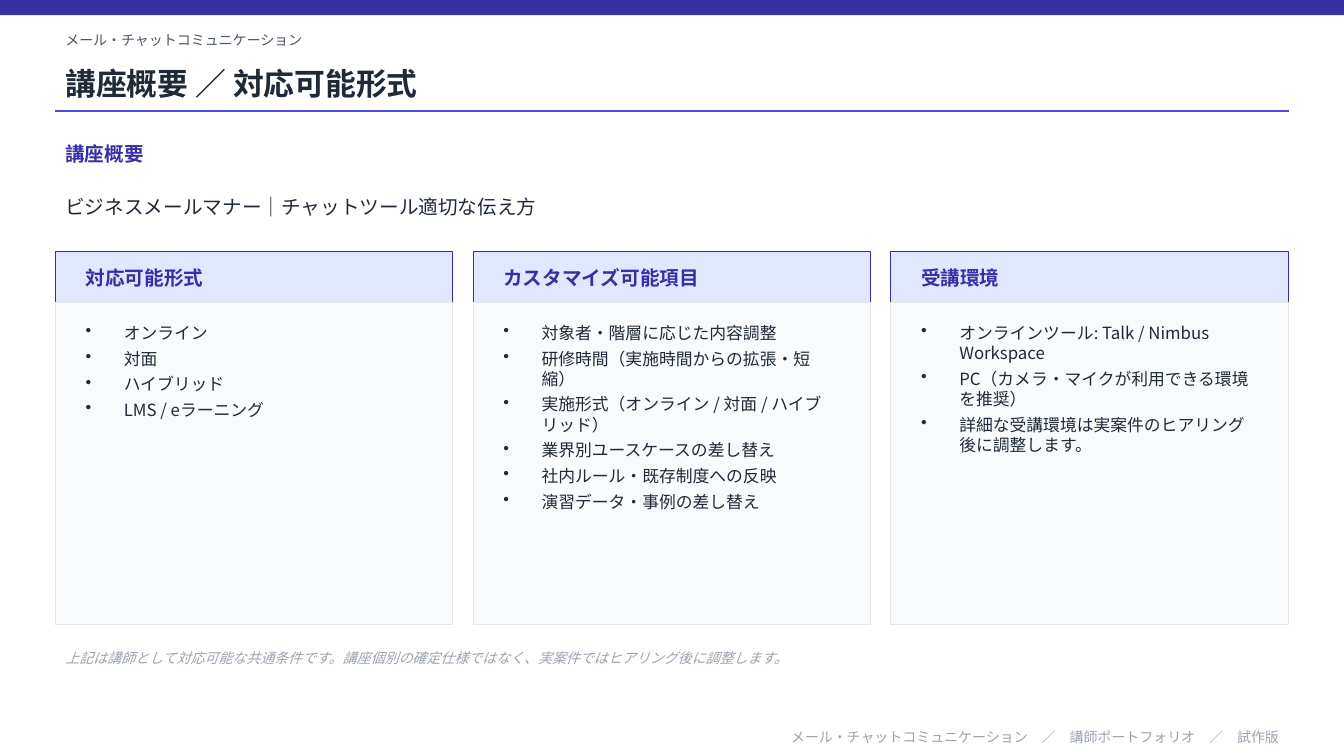
from lxml import etree
from pptx import Presentation
from pptx.dml.color import RGBColor
from pptx.enum.shapes import MSO_CONNECTOR, MSO_SHAPE
from pptx.enum.text import MSO_ANCHOR, PP_ALIGN
from pptx.oxml.ns import qn
from pptx.util import Inches, Pt

RECT, STRAIGHT = MSO_SHAPE.RECTANGLE, MSO_CONNECTOR.STRAIGHT
TOP, MIDDLE = MSO_ANCHOR.TOP, MSO_ANCHOR.MIDDLE
LEFT, RIGHT = PP_ALIGN.LEFT, PP_ALIGN.RIGHT

FONT = "Noto Sans CJK JP"
INDIGO, VIOLET, PALE_INDIGO = "3730A3", "4F46E5", "E0E7FF"
INK, SLATE, MUTED = "1F2937", "4B5563", "9CA3AF"
PANEL, PANEL_EDGE = "F9FAFB", "E5E7EB"

SLIDE_W, SLIDE_H = 13.33, 7.5
MARGIN = 0.55
CONTENT_W = SLIDE_W - 2 * MARGIN
CARD_GAP = 0.2
CARD_PAD = 0.2
HEADING_H = 0.5
BULLET_INDENT = 0.38

COURSE = "メール・チャットコミュニケーション"
CARDS = [
    ("対応可能形式", ["オンライン", "対面", "ハイブリッド", "LMS / eラーニング"]),
    ("カスタマイズ可能項目", [
        "対象者・階層に応じた内容調整",
        "研修時間（実施時間からの拡張・短縮）",
        "実施形式（オンライン / 対面 / ハイブリッド）",
        "業界別ユースケースの差し替え",
        "社内ルール・既存制度への反映",
        "演習データ・事例の差し替え",
    ]),
    ("受講環境", [
        "オンラインツール: Talk / Nimbus Workspace",
        "PC（カメラ・マイクが利用できる環境を推奨）",
        "詳細な受講環境は実案件のヒアリング後に調整します。",
    ]),
]


def color(hex_code):
    return RGBColor.from_string(hex_code)


def add_bullet(paragraph):
    properties = paragraph._p.get_or_add_pPr()
    indent = Inches(BULLET_INDENT)
    properties.set("marL", str(indent))
    properties.set("indent", str(-indent))
    etree.SubElement(properties, qn("a:buChar")).set("char", "•")


def add_text(slide, box, lines, size=10, ink=INK, bold=False, italic=False,
             align=LEFT, anchor=MIDDLE, bullets=False, space_after=None):
    """Write one paragraph per line into box (left, top, width, height)."""
    frame = slide.shapes.add_textbox(*map(Inches, box)).text_frame
    frame.word_wrap = True
    frame.vertical_anchor = anchor
    for number, line in enumerate(lines):
        paragraph = frame.add_paragraph() if number else frame.paragraphs[0]
        paragraph.alignment = align
        if bullets:
            add_bullet(paragraph)
        if space_after is not None:
            paragraph.space_after = Pt(space_after)
        run = paragraph.add_run()
        run.text = line
        font = run.font
        font.name, font.size = FONT, Pt(size)
        font.bold, font.italic = bold, italic
        font.color.rgb = color(ink)
        east_asian = etree.Element(qn("a:ea"), typeface=FONT)
        run._r.rPr.find(qn("a:latin")).addnext(east_asian)


def add_panel(slide, box, fill, edge=None):
    panel = slide.shapes.add_shape(RECT, *map(Inches, box))
    panel.shadow.inherit = False
    panel.fill.solid()
    panel.fill.fore_color.rgb = color(fill)
    if edge:
        panel.line.color.rgb = color(edge)
        panel.line.width = Pt(0.75)
    else:
        panel.line.fill.background()


def add_header(slide, left, top, width):
    add_panel(slide, (0, 0, SLIDE_W, 0.15), INDIGO)
    add_text(slide, (left, top, width, 0.3), [COURSE], ink=SLATE)
    add_text(slide, (left, top + 0.3, width, 0.55), ["講座概要 ／ 対応可能形式"],
             size=22, bold=True)
    rule_y = Inches(top + 0.85)
    rule = slide.shapes.add_connector(
        STRAIGHT, Inches(left), rule_y, Inches(left + width), rule_y)
    rule.line.color.rgb = color(VIOLET)
    rule.line.width = Pt(1)
    etree.SubElement(rule._element.spPr, qn("a:effectLst"))


def add_overview(slide, left, top, width):
    add_text(slide, (left, top, width, 0.35), ["講座概要"],
             size=14, ink=INDIGO, bold=True)
    add_text(slide, (left, top + 0.4, width, 0.6),
             ["ビジネスメールマナー｜チャットツール適切な伝え方"], size=14)


def add_card(slide, left, top, width, height, heading, items):
    text_left, text_w = left + CARD_PAD, width - 2 * CARD_PAD
    body_top, body_h = top + HEADING_H, height - HEADING_H
    add_panel(slide, (left, top, width, HEADING_H), PALE_INDIGO, INDIGO)
    add_text(slide, (text_left, top, text_w, HEADING_H), [heading],
             size=14, ink=INDIGO, bold=True)
    add_panel(slide, (left, body_top, width, body_h), PANEL, PANEL_EDGE)
    add_text(slide, (text_left, body_top + 0.15, text_w, body_h - 0.35), items,
             size=12, anchor=TOP, bullets=True, space_after=4)


def add_card_row(slide, left, top, width, height):
    card_w = (width - CARD_GAP * (len(CARDS) - 1)) / len(CARDS)
    for column, (heading, items) in enumerate(CARDS):
        card_left = left + column * (card_w + CARD_GAP)
        add_card(slide, card_left, top, card_w, height, heading, items)


def add_closing(slide, left, top, width):
    """Place the remark below the cards and the footer line."""
    add_text(slide, (left, top, width, 0.35),
             ["上記は講師として対応可能な共通条件です。講座個別の確定仕様ではなく、"
              "実案件ではヒアリング後に調整します。"], ink=MUTED, italic=True)
    add_text(slide, (left, top + 0.85, width, 0.22),
             [f"{COURSE}　／　講師ポートフォリオ　／　試作版"],
             ink=MUTED, align=RIGHT)


def main():
    deck = Presentation()
    deck.slide_width, deck.slide_height = Inches(SLIDE_W), Inches(SLIDE_H)
    slide = deck.slides.add_slide(deck.slide_layouts[6])
    add_header(slide, MARGIN, 0.25, CONTENT_W)
    add_overview(slide, MARGIN, 1.35, CONTENT_W)
    add_card_row(slide, MARGIN, 2.5, CONTENT_W, 3.7)
    add_closing(slide, MARGIN, 6.35, CONTENT_W)
    deck.save("out.pptx")


if __name__ == "__main__":
    main()
